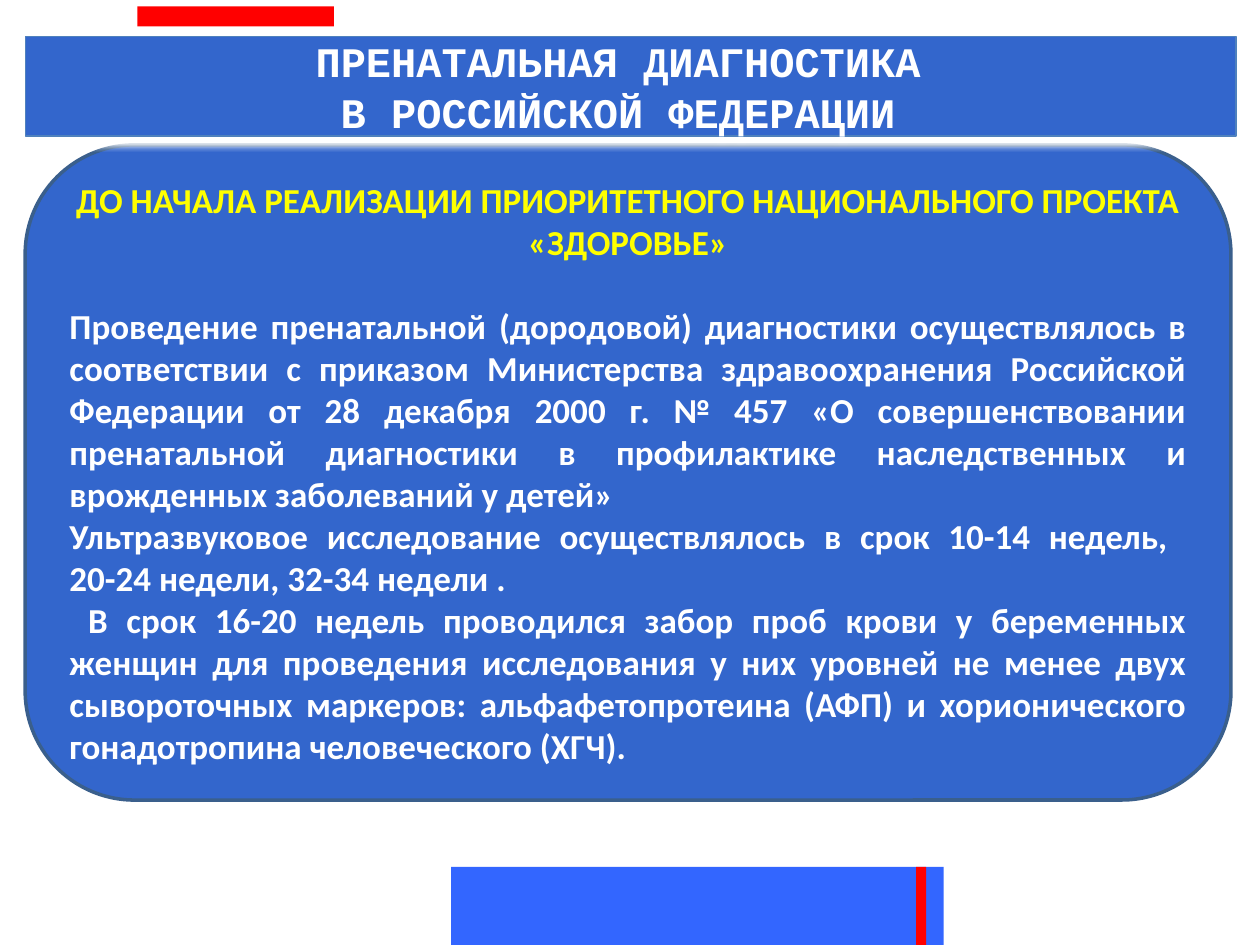
from lxml import etree
from pptx import Presentation
from pptx.dml.color import RGBColor
from pptx.enum.shapes import MSO_SHAPE as SHAPE
from pptx.enum.text import MSO_ANCHOR as ANCHOR, MSO_AUTO_SIZE as AUTO, PP_ALIGN as ALIGN
from pptx.oxml.ns import qn
from pptx.util import Inches, Pt

COLORS = {"red": "FF0000", "bright": "3366FF", "panel": "3366CC", "edge": "3A5F8C",
          "title_edge": "4F81BD", "yellow": "FFFF00", "white": "FFFFFF"}

TITLE = ["ПРЕНАТАЛЬНАЯ ДИАГНОСТИКА ", "В РОССИЙСКОЙ ФЕДЕРАЦИИ "]
HEADING = "ДО НАЧАЛА РЕАЛИЗАЦИИ ПРИОРИТЕТНОГО НАЦИОНАЛЬНОГО ПРОЕКТА «ЗДОРОВЬЕ»"
BODY = [
    ["Проведение пренатальной (дородовой) диагностики осуществлялось в соответствии "
     "с приказом Министерства здравоохранения Российской Федерации от 28 декабря 2000 г. "
     "№ 457 «О совершенствовании пренатальной диагностики в профилактике наследственных "
     "и врожденных заболеваний у детей»"],
    ["Ультразвуковое исследование осуществлялось в срок 10-14 недель, ",
     "20-24 недели, 32-34 недели . "],
    [" В срок 16-20 недель проводился забор проб крови у беременных женщин для проведения "
     "исследования у них уровней не менее двух сывороточных маркеров: альфафетопротеина "
     "(АФП) и хорионического гонадотропина человеческого (ХГЧ)."],
]
BARS = [(1.09, 0.05, 1.56, 0.16, "red"),
        (3.58, 6.88, 3.91, 0.62, "bright"),
        (7.27, 6.88, 0.08, 0.62, "red")]


def rgb(name):
    """Return the named colour."""
    return RGBColor.from_string(COLORS[name])


def paint(sp, fill, edge=None, width=0):
    """Set the fill and outline of a shape."""
    sp.fill.solid()
    sp.fill.fore_color.rgb = rgb(fill)
    if edge:
        sp.line.color.rgb = rgb(edge)
        sp.line.width = Pt(width)
    else:
        sp.line.fill.background()


def add_box(s, kind, x, y, w, h, fill, edge=None, width=0):
    """Add a flat preset shape."""
    sp = s.shapes.add_shape(kind, Inches(x), Inches(y), Inches(w), Inches(h))
    sp.shadow.inherit = False
    paint(sp, fill, edge, width)
    return sp


def add_paragraph(tf, lines, align, font, size, color, first=False):
    """Write one bold paragraph, with a line break between its lines."""
    p = tf.paragraphs[0] if first else tf.add_paragraph()
    p.alignment = align
    for i, line in enumerate(lines):
        if i:
            p.add_line_break()
        r = p.add_run()
        r.text = line
        r.font.name, r.font.size, r.font.bold = font, Pt(size), True
        r.font.color.rgb = rgb(color)
    return p


def add_shadow(sp):
    """Give a shape a soft white shadow below it."""
    sp.shadow.inherit = False
    effects = sp.element.spPr.find(qn("a:effectLst"))
    shadow = etree.SubElement(effects, qn("a:outerShdw"), blurRad=str(Pt(4)),
                              dist=str(Pt(4)), dir="5400000", rotWithShape="0")
    etree.SubElement(shadow, qn("a:srgbClr"), val=COLORS["white"])


def add_panel(s):
    """Add the rounded panel with its heading and body text."""
    sp = add_box(s, SHAPE.ROUNDED_RECTANGLE, 0.2, 1.15, 9.57, 5.2, "panel", "edge", 2)
    tf = sp.text_frame
    tf.word_wrap = True
    tf.vertical_anchor = ANCHOR.MIDDLE
    p = add_paragraph(tf, [HEADING], ALIGN.CENTER, "Calibri", 20, "yellow", first=True)
    p.space_after = Pt(24)
    for lines in BODY:
        add_paragraph(tf, lines, ALIGN.JUSTIFY, "Calibri", 20, "white")


def format_title(s):
    """Place the title band in front and write its lines."""
    sp = s.shapes.title
    sp.left, sp.top, sp.width, sp.height = map(Inches, (0.2, 0.29, 9.61, 0.79))
    paint(sp, "panel", "title_edge", 0.75)
    add_shadow(sp)
    tf = sp.text_frame
    tf.word_wrap = True
    tf.auto_size = AUTO.NONE
    tf.vertical_anchor = ANCHOR.MIDDLE
    for i, line in enumerate(TITLE):
        add_paragraph(tf, [line], ALIGN.CENTER, "Courier New", 24, "white", first=i == 0)
    sp.element.getparent().append(sp.element)


def main():
    """Build and save the slide."""
    prs = Presentation()
    prs.slide_width, prs.slide_height = Inches(10), Inches(7.5)
    s = prs.slides.add_slide(prs.slide_layouts[5])
    for bar in BARS:
        add_box(s, SHAPE.RECTANGLE, *bar)
    add_panel(s)
    format_title(s)
    prs.save("out.pptx")


if __name__ == "__main__":
    main()
